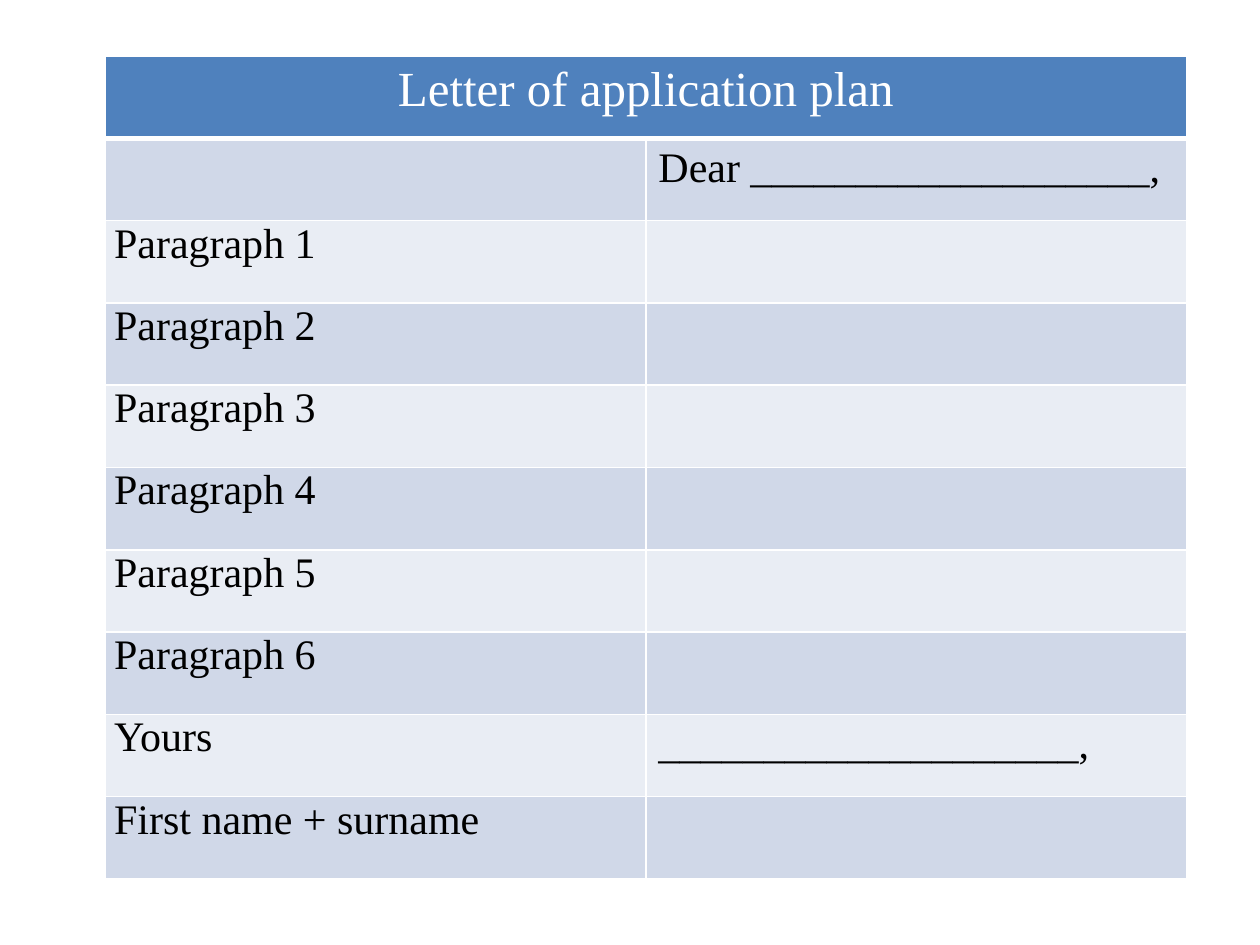
import pptx
import pptx.util
import pptx.dml.color
import pptx.enum.text
import pptx.oxml.ns
from lxml import etree

Cm, Pt = pptx.util.Cm, pptx.util.Pt
ALIGN = pptx.enum.text.PP_ALIGN


def color(hex_value):
    return pptx.dml.color.RGBColor.from_string(hex_value)


class PlanSlide:
    font = "Times New Roman"
    header_fill, bands = "4F81BD", ("D0D8E8", "E9EDF4")
    header_ink, ink, rule = "FFFFFF", "000000", "FFFFFF"
    label_margins = {"margin_left": Cm(0.18), "margin_right": Cm(0.18),
                     "margin_top": 0, "margin_bottom": 0}

    def __init__(self, deck):
        self.slide = deck.slides.add_slide(deck.slide_layouts[6])

    def borders(self, cell, bottom=1):
        properties = cell._tc.get_or_add_tcPr()
        for side, width in {"L": 1, "R": 1, "T": 1, "B": bottom}.items():
            line = etree.SubElement(properties, pptx.oxml.ns.qn(f"a:ln{side}"),
                                    w=str(Pt(width)))
            fill = etree.SubElement(line, pptx.oxml.ns.qn("a:solidFill"))
            etree.SubElement(fill, pptx.oxml.ns.qn("a:srgbClr"), val=self.rule)

    def cell(self, cell, text, fill, ink, size, align=ALIGN.LEFT, bottom=1, margins=None):
        self.borders(cell, bottom)
        cell.fill.solid()
        cell.fill.fore_color.rgb = color(fill)
        for name, value in (margins or {}).items():
            setattr(cell, name, value)
        if not text:
            return
        paragraph = cell.text_frame.paragraphs[0]
        paragraph.alignment = align
        run = paragraph.add_run()
        run.text = text
        for name, value in {"name": self.font, "size": Pt(size), "bold": False}.items():
            setattr(run.font, name, value)
        run.font.color.rgb = color(ink)

    def table(self, heading, rows, left, top, column_width, row_height):
        count = len(rows) + 1
        plan = self.slide.shapes.add_table(
            count, 2, Cm(left), Cm(top), Cm(2 * column_width), Cm(count * row_height)).table

        # Heading across both columns
        plan.cell(0, 0).merge(plan.cell(0, 1))
        for column, text in enumerate((heading, "")):
            self.cell(plan.cell(0, column), text, self.header_fill, self.header_ink, 28,
                      ALIGN.CENTER, bottom=3)

        # Banded rows: label on the left, wording on the right
        for number, (label, wording) in enumerate(rows, start=1):
            band = self.bands[(number - 1) % 2]
            self.cell(plan.cell(number, 0), label, band, self.ink, 24,
                      margins=self.label_margins if label else None)
            self.cell(plan.cell(number, 1), wording, band, self.ink, 24)


def main():
    deck = pptx.Presentation()
    deck.slide_width, deck.slide_height = Cm(25.4), Cm(19.05)

    # Parts of the letter, from greeting to signature
    letter = [("", "Dear ___________________,")]
    letter += [(f"Paragraph {number}", "") for number in range(1, 7)]
    letter += [("Yours", "____________________,"), ("First name + surname", "")]

    PlanSlide(deck).table("Letter of application plan", letter,
                          left=2.12, top=1.13, column_width=10.9, row_height=1.66)
    deck.save("out.pptx")


if __name__ == "__main__":
    main()
